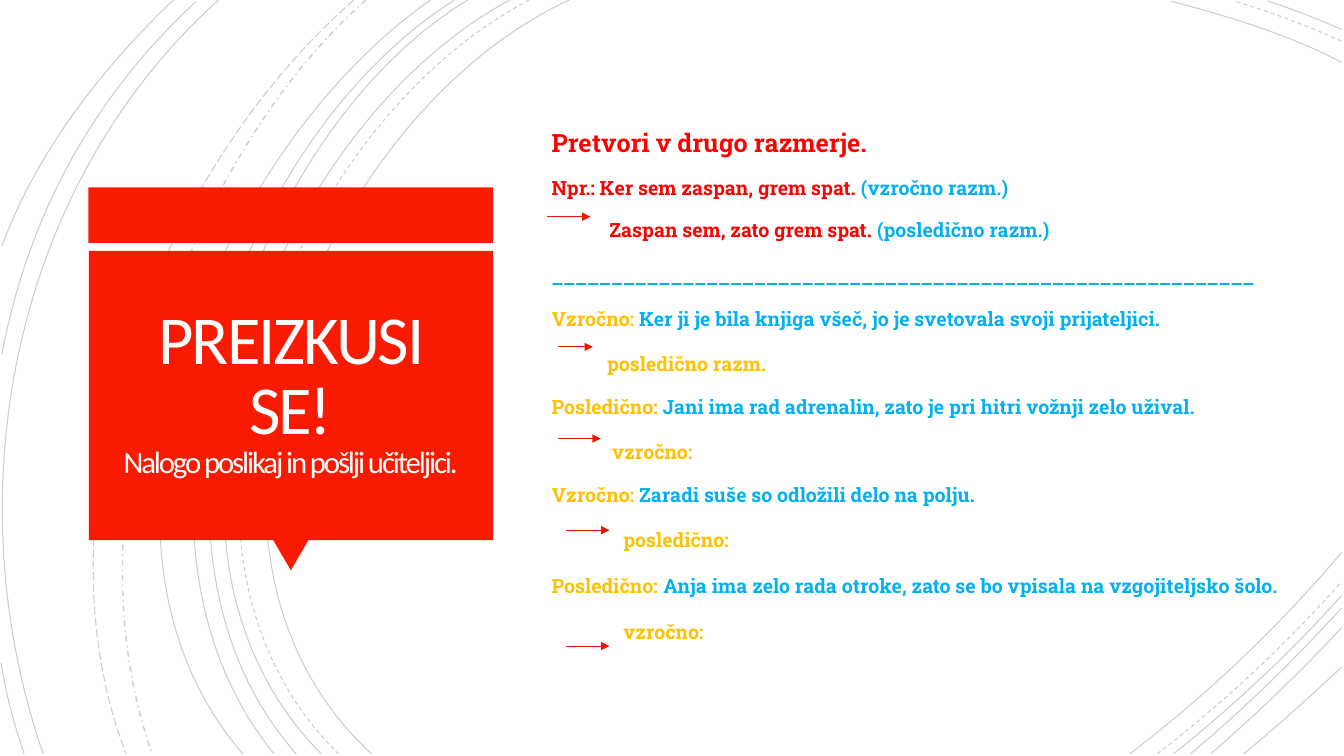
from lxml.etree import SubElement
from pptx import Presentation
from pptx.dml.color import RGBColor
from pptx.enum.dml import MSO_LINE
from pptx.enum.shapes import MSO_CONNECTOR, MSO_SHAPE
from pptx.enum.text import MSO_ANCHOR, PP_ALIGN
from pptx.oxml.ns import qn
from pptx.util import Cm, Pt

COLORS = {"panel": "F81B02", "arrow": "ED1A02", "title": "FFFEFF", "arc": "000000",
          "red": "FF0000", "blue": "00B0F0", "gold": "FFC000"}
SOLID, DASH = MSO_LINE.SOLID, MSO_LINE.DASH
BOTTOM = 19
RIGHT = 33.81

LARGE_ARCS = [
    (14.35, 8, 2.92, 3.63, 13.72, 9.37, SOLID),
    (13.34, 7.24, 3.18, 3.12, 13.64, 8.53, DASH),
    (12.85, 6.86, 3.23, 2.79, 13.64, 8.1, SOLID),
    (11.79, 6.2, 3.38, 2.79, 13.74, 7.47, SOLID),
    (11.46, 5.87, 3.51, 2.46, 13.54, 6.91, SOLID),
    (10.85, 5.51, 3.73, 1.35, 13.44, 6.12, SOLID),
    (9.22, 4.47, 4.22, 1.65, 12.93, 3.84, MSO_LINE.DASH_DOT),
    (8.92, 3.99, 4.29, 0.74, 12.67, 3.18, MSO_LINE.LONG_DASH),
    (5.51, 0.28, 4.7, -1.17, 12.45, 1.09, SOLID),
]
LEFT_ARCS = [
    ((4.95, 0.03), (2.34, 2.44), (0.71, 5.44), (0.05, 8.92)),
    ((0.03, 16.71), (0.15, 17.5), (0.36, 18.26), (0.61, BOTTOM)),
    ((4.37, 0), (2.54, 1.75), (0.94, 3.81), (0.05, 6.2)),
]
TOP_ARCS = [
    (1.57, 32.46, 0.86, 30.94, 0.41, 29.51, SOLID),
    (1.04, 32.94, 0.64, 32, 0.3, 31.12, DASH),
    (0.74, 33.2, 0.48, 32.59, 0.23, 31.95, SOLID),
]
CORNER_ARCS = [
    (28.47, 30.4, 17.53, 32.23, 15.8, 13.92, SOLID),
    (29.16, 30.81, 17.73, 32.39, 16.26, 14.66, DASH),
    (29.57, 31.06, 17.81, 32.51, 16.46, 15.01, SOLID),
    (30, 31.34, 17.88, 32.61, 16.64, 15.32, SOLID),
    (30.51, 31.65, 18.01, 32.77, 16.94, 15.82, SOLID),
    (31.34, 32.18, 18.31, 32.99, 17.58, 16.81, SOLID),
]
EXERCISE = [
    (0, 0, [("Pretvori v drugo razmerje.", "red", 18)]),
    (0, 10, [("Npr.: Ker sem zaspan, grem spat. ", "red", 14), ("(vzročno razm.)", "blue", 14)]),
    (1.46, 10, [("Zaspan sem, zato grem spat. ", "red", 14), ("(posledično razm.)", "blue", 14)]),
    (0, 10, [("___________________________________________________________", "blue", 16)]),
    (0, 10, [("Vzročno: ", "gold", 14),
             ("Ker ji je bila knjiga všeč, jo je svetovala svoji prijateljici.", "blue", 14)]),
    (1.4, 12.5, [("posledično razm.", "gold", 14)]),
    (0, 10, [("Posledično: ", "gold", 14),
             ("Jani ima rad adrenalin, zato je pri hitri vožnji zelo užival.", "blue", 14)]),
    (1.53, 12.5, [("vzročno:", "gold", 14)]),
    (0, 10, [("Vzročno: ", "gold", 14), ("Zaradi suše so odložili delo na polju.", "blue", 14)]),
    (1.81, 12.5, [("posledično:", "gold", 14)]),
    (0, 10, [("Posledično:", "gold", 14), (" ", "gold", 16),
             ("Anja ima zelo rada otroke, zato se bo vpisala na vzgojiteljsko šolo.", "blue", 14)]),
    (1.81, 12.5, [("vzročno:", "gold", 14)]),
]
ARROWS = [(13.79, 5.46, 1.09), (14.05, 8.74, 0.89), (14.05, 11.05, 1.09),
          (14.27, 13.36, 1.09), (14.27, 16.28, 1.09)]


def rgb(name):
    return RGBColor.from_string(COLORS[name])


def add_run(p, text, size=14, color="blue", font="Roboto Slab", bold=False, spacing=None):
    r = p.add_run()
    r.text = text
    r.font.size = Pt(size)
    r.font.name = font
    r.font.bold = bold
    r.font.color.rgb = rgb(color)
    if spacing is not None:
        r.font._element.set("spc", str(int(spacing * 100)))
    return r


class SlideBuilder:
    def __init__(self, slide):
        self.shapes = slide.shapes

    def arc(self, points, dash=SOLID, width=0.75):
        start, *rest = [(Cm(x), Cm(y)) for x, y in points]
        builder = self.shapes.build_freeform(*start)
        builder.add_line_segments(rest, close=False)
        sp = builder.convert_to_shape()
        outline = sp._element.find(".//" + qn("a:path"))
        segments = outline.findall(qn("a:lnTo"))
        curve = SubElement(outline, qn("a:cubicBezTo"))
        for segment in segments:
            curve.append(segment[0])
            outline.remove(segment)
        sp.shadow.inherit = False
        sp.fill.background()
        sp.line.color.rgb = rgb("arc")
        sp.line.width = Pt(width)
        sp.line.dash_style = dash
        color = sp.line._ln.find(".//" + qn("a:srgbClr"))
        SubElement(color, qn("a:alpha"), val="20000")

    def panel(self, kind, x, y, w, h, rotation=0):
        sp = self.shapes.add_shape(kind, Cm(x), Cm(y), Cm(w), Cm(h))
        sp.shadow.inherit = False
        sp.fill.solid()
        sp.fill.fore_color.rgb = rgb("panel")
        sp.line.fill.background()
        sp.rotation = rotation

    def text_box(self, x, y, w, h, anchor, side, vertical):
        tf = self.shapes.add_textbox(Cm(x), Cm(y), Cm(w), Cm(h)).text_frame
        tf.word_wrap = True
        tf.vertical_anchor = anchor
        tf.margin_left = tf.margin_right = Cm(side)
        tf.margin_top = tf.margin_bottom = Cm(vertical)
        return tf

    def title(self):
        tf = self.text_box(2.46, 6.52, 9.73, 6.83, MSO_ANCHOR.MIDDLE, 0.64, 0.64)
        p = tf.paragraphs[0]
        p.alignment = PP_ALIGN.CENTER
        p.line_spacing = 0.85
        style = dict(color="title", font="Calibri", spacing=-1.5)
        add_run(p, "PREIZKUSI SE!", size=49, **style)
        p.add_line_break()
        add_run(p, "Nalogo poslikaj in pošlji učiteljici.", size=22, **style)

    def exercise(self):
        tf = self.text_box(13.65, 3.05, 19.41, 14.5, MSO_ANCHOR.TOP, 0.25, 0)
        for i, (indent, before, runs) in enumerate(EXERCISE):
            p = tf.add_paragraph() if i else tf.paragraphs[0]
            p.line_spacing = 1.2
            p.space_before = Pt(before)
            if indent:
                p._p.get_or_add_pPr().set("marL", str(Cm(indent)))
            for text, color, size in runs:
                add_run(p, text, size=size, color=color, bold=True)

    def arrow(self, x, y, length):
        line = self.shapes.add_connector(MSO_CONNECTOR.STRAIGHT, Cm(x), Cm(y), Cm(x + length), Cm(y))
        line.line.color.rgb = rgb("arrow")
        line.line.width = Pt(0.75)
        SubElement(line.line._ln, qn("a:tailEnd"), type="triangle")
        SubElement(line._element.spPr, qn("a:effectLst"))


def main():
    prs = Presentation()
    prs.slide_width, prs.slide_height = Cm(33.87), Cm(19.05)
    s = SlideBuilder(prs.slides.add_slide(prs.slide_layouts[6]))

    for x, x1, y1, x2, y2, end, dash in LARGE_ARCS:
        width = 1 if dash == MSO_LINE.DASH_DOT else 0.75
        s.arc([(x, 0), (x1, y1), (x2, y2), (end, BOTTOM)], dash, width)
    for points in LEFT_ARCS:
        s.arc(points)
    for y, x1, y1, x2, y2, end, dash in TOP_ARCS:
        s.arc([(RIGHT, y), (x1, y1), (x2, y2), (end, 0.03)], dash)
    for x, x1, y1, x2, y2, end, dash in CORNER_ARCS:
        s.arc([(x, BOTTOM), (x1, y1), (x2, y2), (RIGHT, end)], dash)

    s.panel(MSO_SHAPE.RECTANGLE, 2.23, 4.72, 10.2, 1.4)
    s.panel(MSO_SHAPE.ISOSCELES_TRIANGLE, 6.88, 13.6, 0.9, 0.77, rotation=180)
    s.panel(MSO_SHAPE.RECTANGLE, 2.24, 6.32, 10.19, 7.29)
    s.title()
    s.exercise()
    for arrow in ARROWS:
        s.arrow(*arrow)
    prs.save("out.pptx")


if __name__ == "__main__":
    main()
